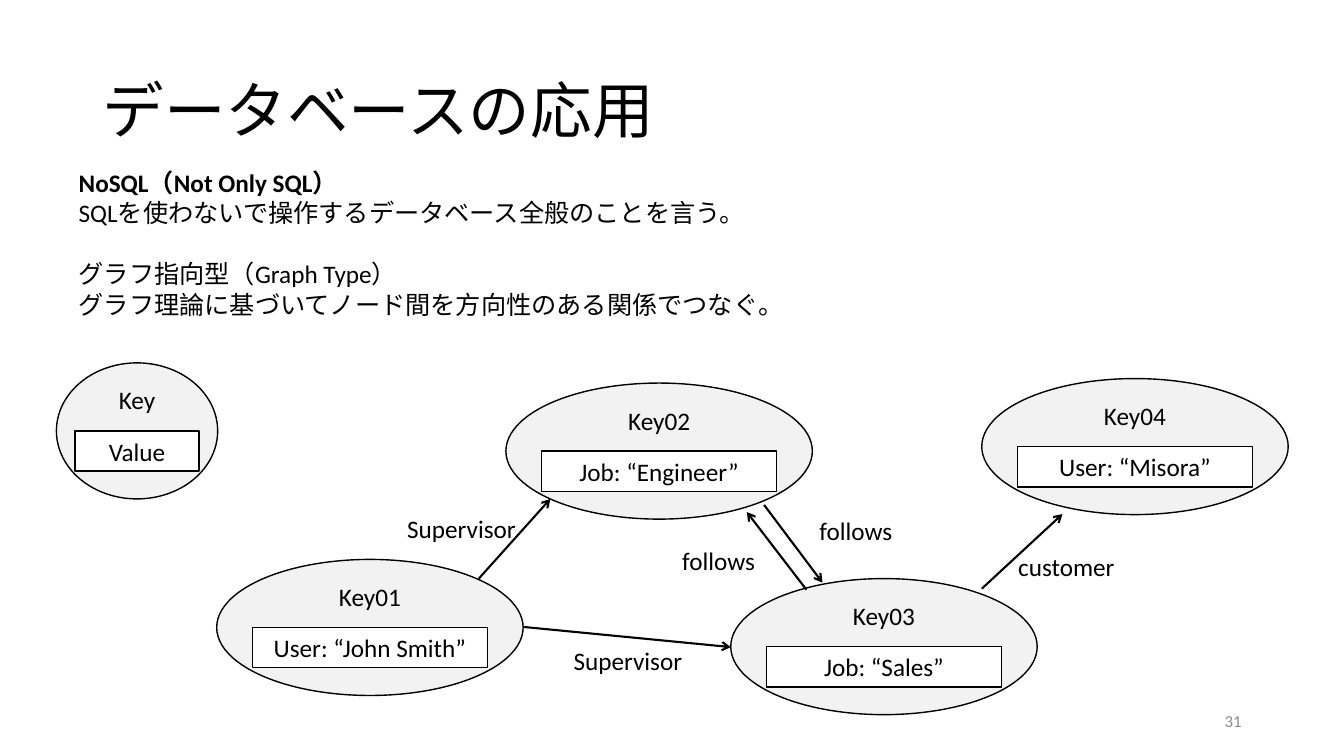
from dataclasses import dataclass

import lxml.etree
import pptx
import pptx.dml.color
import pptx.enum.shapes
import pptx.enum.text
import pptx.oxml.ns
import pptx.util

Pt = pptx.util.Pt
ALIGN = pptx.enum.text.PP_ALIGN
ANCHOR = pptx.enum.text.MSO_ANCHOR
SHAPE = pptx.enum.shapes.MSO_SHAPE

COLORS = {"ink": "000000", "node": "F2F2F2", "value": "FFFFFF", "number": "8C8C8C"}
FONT = "Calibri"
TEXT_SIZE = 18
LINE_HEIGHT = 22
NODE_HEIGHT = 97.2
VALUE_HEIGHT = 28.8
LABEL_WIDTH, LABEL_HEIGHT = 131, 29


@dataclass
class Node:
    key: str
    value: str
    left: float
    top: float
    width: float = 218.9
    value_width: float = 167.8


@dataclass
class Relation:
    label: str
    start: tuple[float, float]
    end: tuple[float, float]
    label_left: float
    label_top: float


NODES = [
    Node("Key01", "User: “John Smith”", 154.8, 399.6),
    Node("Key02", "Job: “Engineer”", 361.4, 273.6),
    Node("Key03", "Job: “Sales”", 522, 413.3),
    Node("Key04", "User: “Misora”", 701.3, 270.4),
    Node("Key", "Value", 40.3, 259.2, 115.2, 88.6),
]
RELATIONS = [
    Relation("Supervisor", (342, 413.3), (393.1, 356.4), 264.2, 362.9),
    Relation("follows", (576, 421.2), (533.5, 365.8), 447.8, 386),
    Relation("follows", (545.8, 360.7), (587.5, 416.2), 545.8, 364.4),
    Relation("customer", (701.3, 420.5), (758.9, 367.2), 696.2, 390.2),
    Relation("Supervisor", (373.7, 447.8), (522, 462.2), 383, 457.2),
]
EXPLANATION = [
    "NoSQL（Not Only SQL）",
    "SQLを使わないで操作するデータベース全般のことを言う。",
    "グラフ指向型（Graph Type）",
    "グラフ理論に基づいてノード間を方向性のある関係でつなぐ。",
]


def rgb(name: str) -> pptx.dml.color.RGBColor:
    return pptx.dml.color.RGBColor.from_string(COLORS[name])


def place(shape, left: float, top: float, width: float, height: float) -> None:
    shape.left, shape.top = Pt(left), Pt(top)
    shape.width, shape.height = Pt(width), Pt(height)


def write(shape, text: str, align, anchor, size: float = TEXT_SIZE, color: str = "ink") -> None:
    frame = shape.text_frame
    frame.text = text
    frame.word_wrap = True
    frame.auto_size = pptx.enum.text.MSO_AUTO_SIZE.NONE
    frame.vertical_anchor = anchor
    for paragraph in frame.paragraphs:
        paragraph.alignment = align
        for run in paragraph.runs:
            run.font.name = FONT
            run.font.size = Pt(size)
            run.font.color.rgb = rgb(color)


def add_outlined(shapes, kind, fill: str, left: float, top: float, width: float, height: float):
    shape = shapes.add_shape(kind, Pt(left), Pt(top), Pt(width), Pt(height))
    shape.shadow.inherit = False
    shape.fill.solid()
    shape.fill.fore_color.rgb = rgb(fill)
    shape.line.color.rgb = rgb("ink")
    shape.line.width = Pt(1)
    return shape


def add_node(slide, node: Node) -> None:
    """Group an ellipse holding the key with the value box below its middle."""
    group = slide.shapes.add_group_shape()
    ellipse = add_outlined(group.shapes, SHAPE.OVAL, "node",
                           node.left, node.top, node.width, NODE_HEIGHT)
    write(ellipse, node.key, ALIGN.CENTER, ANCHOR.TOP)
    ellipse.text_frame.margin_top = Pt(1.4)
    value_left = node.left + (node.width - node.value_width) / 2
    value_box = add_outlined(group.shapes, SHAPE.RECTANGLE, "value", value_left,
                             node.top + NODE_HEIGHT / 2, node.value_width, VALUE_HEIGHT)
    write(value_box, node.value, ALIGN.CENTER, ANCHOR.MIDDLE)


def add_arrow(slide, relation: Relation) -> None:
    arrow = slide.shapes.add_connector(
        pptx.enum.shapes.MSO_CONNECTOR.STRAIGHT,
        *(Pt(length) for length in relation.start + relation.end))
    arrow.line.color.rgb = rgb("ink")
    arrow.line.width = Pt(1.5)
    qn = pptx.oxml.ns.qn
    lxml.etree.SubElement(arrow.line._get_or_add_ln(), qn("a:tailEnd"), type="arrow")
    lxml.etree.SubElement(arrow._element.spPr, qn("a:effectLst"))


def add_text(slide, left: float, top: float, width: float, height: float):
    return slide.shapes.add_textbox(Pt(left), Pt(top), Pt(width), Pt(height))


def fill_explanation(body) -> None:
    place(body, 49, 115.9, 863.3, 116.6)
    write(body, "\n".join(EXPLANATION), ALIGN.LEFT, ANCHOR.TOP)
    heading, _, graph_type, _ = body.text_frame.paragraphs
    for paragraph in body.text_frame.paragraphs:
        paragraph.space_before = Pt(0)
        properties = paragraph._p.get_or_add_pPr()
        properties.set("marL", "0")
        properties.set("indent", "0")
        lxml.etree.SubElement(properties, pptx.oxml.ns.qn("a:buNone"))
    graph_type.space_before = Pt(LINE_HEIGHT)
    for run in heading.runs:
        run.font.bold = True


def main() -> None:
    presentation = pptx.Presentation()
    presentation.slide_width, presentation.slide_height = Pt(960), Pt(540)
    slide = presentation.slides.add_slide(presentation.slide_layouts[1])

    title = slide.shapes.title
    place(title, 66, 28.8, 828, 104.4)
    write(title, "データベースの応用", ALIGN.LEFT, ANCHOR.MIDDLE, 44)
    title.text_frame.paragraphs[0].line_spacing = 0.9

    fill_explanation(slide.placeholders[1])

    for node in NODES:
        add_node(slide, node)
    for relation in RELATIONS:
        add_arrow(slide, relation)
    for relation in RELATIONS:
        label = add_text(slide, relation.label_left, relation.label_top,
                         LABEL_WIDTH, LABEL_HEIGHT)
        write(label, relation.label, ALIGN.CENTER, ANCHOR.TOP)

    page_number = add_text(slide, 678, 500.5, 216, 28.8)
    write(page_number, "31", ALIGN.RIGHT, ANCHOR.MIDDLE, 12, "number")

    presentation.save("out.pptx")


if __name__ == "__main__":
    main()
